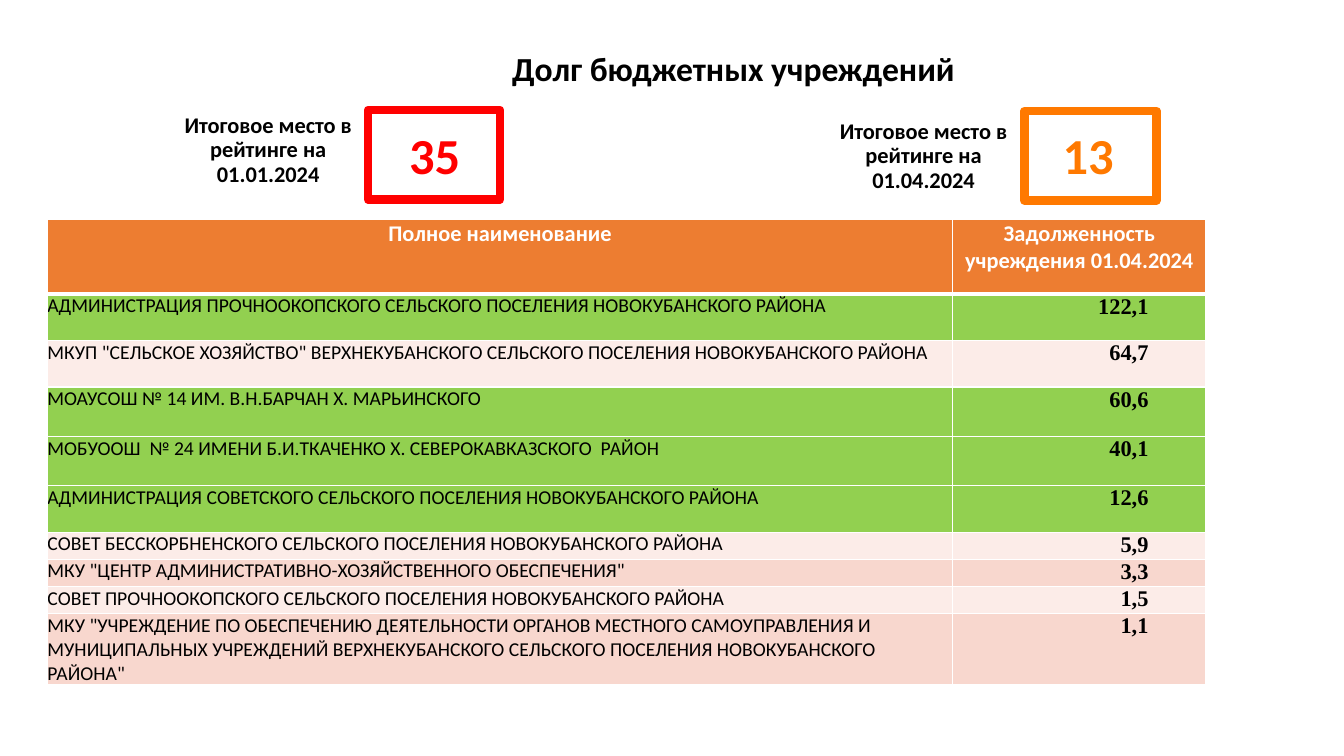
from pptx import Presentation
from pptx import util as u
from pptx.dml.color import RGBColor
from pptx.enum import shapes, text
from pptx.oxml import parse_xml
from pptx.oxml.ns import nsdecls

COLORS = {
    "black": "000000", "white": "FFFFFF", "red": "FF0000", "orange": "FF7900",
    "header": "ED7D31", "green": "92D050", "light": "FCECE8", "pink": "F8D7CE",
}
HEADERS = ("Полное наименование", "Задолженность учреждения 01.04.2024")
COLUMN_WIDTHS = (8.98, 2.51)
HEADER_HEIGHT = 0.74
# Name, debt, row colour, row height
DEBTS = [
    ("АДМИНИСТРАЦИЯ ПРОЧНООКОПСКОГО СЕЛЬСКОГО ПОСЕЛЕНИЯ НОВОКУБАНСКОГО РАЙОНА", "122,1", "green", 0.46),
    ('МКУП "СЕЛЬСКОЕ ХОЗЯЙСТВО" ВЕРХНЕКУБАНСКОГО СЕЛЬСКОГО ПОСЕЛЕНИЯ НОВОКУБАНСКОГО РАЙОНА', "64,7", "light", 0.46),
    ("МОАУСОШ № 14 ИМ. В.Н.БАРЧАН Х. МАРЬИНСКОГО", "60,6", "green", 0.49),
    ("МОБУООШ  № 24 ИМЕНИ Б.И.ТКАЧЕНКО Х. СЕВЕРОКАВКАЗСКОГО  РАЙОН", "40,1", "green", 0.49),
    ("АДМИНИСТРАЦИЯ СОВЕТСКОГО СЕЛЬСКОГО ПОСЕЛЕНИЯ НОВОКУБАНСКОГО РАЙОНА", "12,6", "green", 0.46),
    ("СОВЕТ БЕССКОРБНЕНСКОГО СЕЛЬСКОГО ПОСЕЛЕНИЯ НОВОКУБАНСКОГО РАЙОНА", "5,9", "light", 0.27),
    ('МКУ "ЦЕНТР АДМИНИСТРАТИВНО-ХОЗЯЙСТВЕННОГО ОБЕСПЕЧЕНИЯ"', "3,3", "pink", 0.27),
    ("СОВЕТ ПРОЧНООКОПСКОГО СЕЛЬСКОГО ПОСЕЛЕНИЯ НОВОКУБАНСКОГО РАЙОНА", "1,5", "light", 0.27),
    ('МКУ "УЧРЕЖДЕНИЕ ПО ОБЕСПЕЧЕНИЮ ДЕЯТЕЛЬНОСТИ ОРГАНОВ МЕСТНОГО САМОУПРАВЛЕНИЯ '
     'И МУНИЦИПАЛЬНЫХ УЧРЕЖДЕНИЙ ВЕРХНЕКУБАНСКОГО СЕЛЬСКОГО ПОСЕЛЕНИЯ НОВОКУБАНСКОГО РАЙОНА"', "1,1", "pink", 0.7),
]


def rgb(name):
    return RGBColor.from_string(COLORS[name])


def inches(box):
    return [u.Inches(value) for value in box]


def write(frame, words, size=16, color="black", bold=True, font="Calibri",
          align=text.PP_ALIGN.CENTER, anchor=text.MSO_ANCHOR.TOP, spacing=1.0):
    frame.word_wrap = True
    frame.vertical_anchor = anchor
    paragraph = frame.paragraphs[0]
    paragraph.alignment = align
    paragraph.line_spacing = spacing
    run = paragraph.add_run()
    run.text = words
    run.font.name, run.font.size, run.font.bold = font, u.Pt(size), bold
    run.font.color.rgb = rgb(color)


# Title
def add_title(slide, box, words):
    title = slide.shapes.title
    title.left, title.top, title.width, title.height = inches(box)
    write(title.text_frame, words, size=24, anchor=text.MSO_ANCHOR.MIDDLE, spacing=0.9)


# Rating place: label, framed number
def add_rating(slide, label_box, frame_box, number_left, date, place, color):
    label = slide.shapes.add_textbox(*inches(label_box))
    write(label.text_frame, f"Итоговое место в рейтинге на {date}",
          anchor=text.MSO_ANCHOR.MIDDLE, spacing=0.9)

    number = slide.shapes.add_textbox(*inches((number_left, 1.18, 0.88, 0.71)))
    write(number.text_frame, place, size=36, color=color, align=text.PP_ALIGN.LEFT)

    frame = slide.shapes.add_shape(shapes.MSO_SHAPE.RECTANGLE, *inches(frame_box))
    frame.shadow.inherit = False
    frame.fill.background()
    frame.line.color.rgb = rgb(color)
    frame.line.width = u.Pt(6)


def format_cell(cell, fill, top=1, bottom=1, right_margin=0.0):
    cell.margin_left = cell.margin_top = cell.margin_bottom = 0
    cell.margin_right = u.Inches(right_margin)
    properties = cell._tc.get_or_add_tcPr()
    for side, width in (("L", 1), ("R", 1), ("T", top), ("B", bottom)):
        properties.append(parse_xml(
            f'<a:ln{side} {nsdecls("a")} w="{u.Pt(width)}"><a:solidFill>'
            f'<a:srgbClr val="{COLORS["white"]}"/></a:solidFill></a:ln{side}>'))
    cell.fill.solid()
    cell.fill.fore_color.rgb = rgb(fill)


# Debt table
def add_debt_table(slide, left, top):
    heights = [HEADER_HEIGHT] + [debt[3] for debt in DEBTS]
    box = inches((left, top, sum(COLUMN_WIDTHS), sum(heights)))
    table = slide.shapes.add_table(len(heights), len(HEADERS), *box).table
    table.horz_banding = False
    for column, width in zip(table.columns, COLUMN_WIDTHS):
        column.width = u.Inches(width)
    for row, height in zip(table.rows, heights):
        row.height = u.Inches(height)

    for column, words in enumerate(HEADERS):
        cell = table.cell(0, column)
        format_cell(cell, "header", bottom=3)
        write(cell.text_frame, words, color="white")

    for row, (name, debt, fill, _) in enumerate(DEBTS, start=1):
        top_line = 3 if row == 1 else 1
        name_cell, debt_cell = table.cell(row, 0), table.cell(row, 1)
        format_cell(name_cell, fill, top=top_line)
        write(name_cell.text_frame, name, size=14, bold=False, align=text.PP_ALIGN.LEFT)
        format_cell(debt_cell, fill, top=top_line, right_margin=0.57)
        write(debt_cell.text_frame, debt, font="Times New Roman", align=text.PP_ALIGN.RIGHT)


def main():
    presentation = Presentation()
    presentation.slide_width = u.Inches(13.33)
    presentation.slide_height = u.Inches(7.5)
    slide = presentation.slides.add_slide(presentation.slide_layouts[5])
    add_title(slide, (1.44, 0.28, 11.67, 0.85), "Долг бюджетных учреждений")
    add_rating(slide, (1.47, 1.07, 2.38, 0.85), (3.65, 1.09, 1.31, 0.89), 3.96,
               "01.01.2024", "35", "red")
    add_rating(slide, (8.05, 1.13, 2.22, 0.85), (10.16, 1.1, 1.31, 0.89), 10.44,
               "01.04.2024", "13", "orange")
    add_debt_table(slide, 0.47, 2.18)
    presentation.save("out.pptx")


if __name__ == "__main__":
    main()
